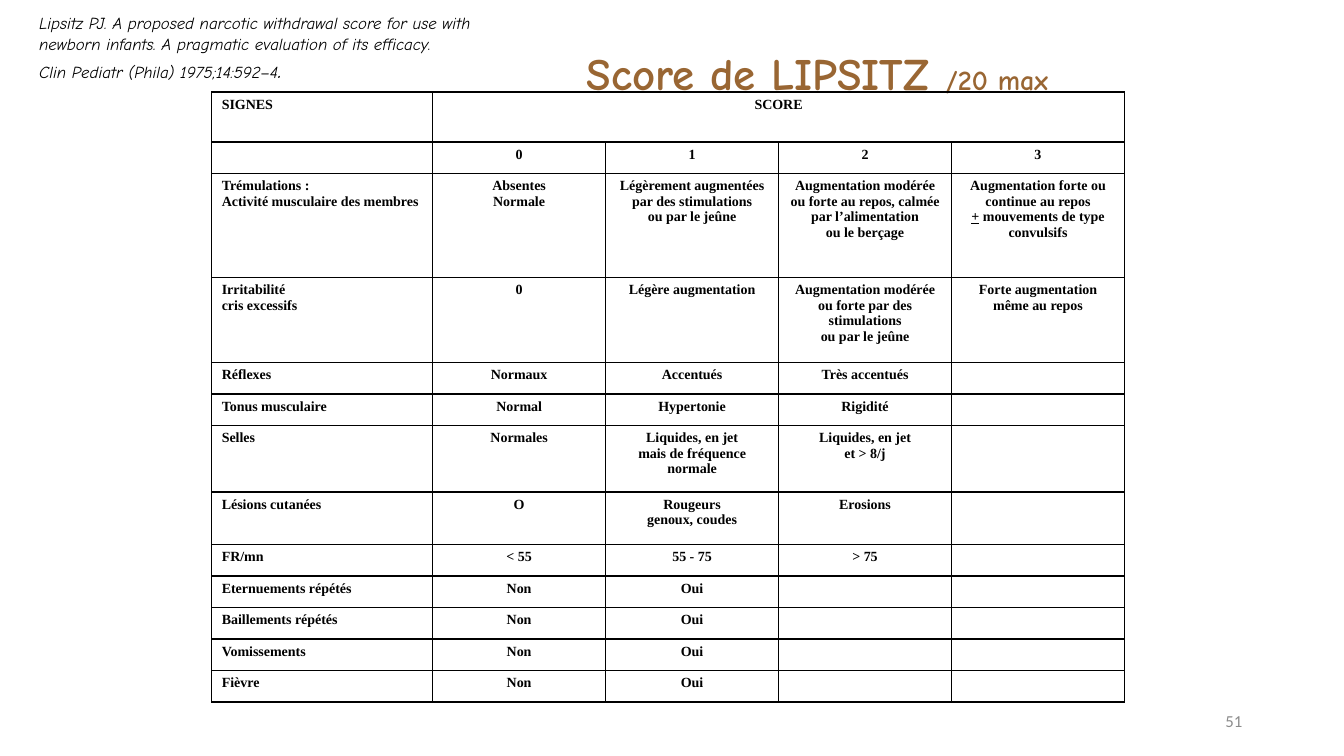
from lxml import etree
from pptx import Presentation
from pptx.dml import color
from pptx.enum import text
from pptx.oxml import ns
from pptx.util import Inches, Pt

COMIC, SERIF, SANS = "Comic Neue", "Times New Roman", "Calibri"
LEFT, CENTER, RIGHT = text.PP_ALIGN.LEFT, text.PP_ALIGN.CENTER, text.PP_ALIGN.RIGHT
MIDDLE, TOP = text.MSO_ANCHOR.MIDDLE, text.MSO_ANCHOR.TOP

# Table content: a line break starts a paragraph, underscores enclose underlined words
YES_NO = ["Non", "Oui", "", ""]
SCORES = [
    ["SIGNES", "SCORE", "", "", ""],
    ["", "0", "1", "2", "3"],
    ["Trémulations :\nActivité musculaire des membres", "Absentes\nNormale",
     "Légèrement augmentées\npar des stimulations\nou par le jeûne",
     "Augmentation modérée ou forte au repos, calmée par l’alimentation\nou le berçage",
     "Augmentation forte ou continue au repos\n_+_ mouvements de type convulsifs"],
    ["Irritabilité\ncris excessifs", "0", "Légère augmentation",
     "Augmentation modérée ou forte par des stimulations\nou par le jeûne",
     "Forte augmentation\nmême au repos"],
    ["Réflexes", "Normaux", "Accentués", "Très accentués", ""],
    ["Tonus musculaire", "Normal", "Hypertonie", "Rigidité", ""],
    ["Selles", "Normales", "Liquides, en jet\nmais de fréquence normale",
     "Liquides, en jet\net > 8/j", ""],
    ["Lésions cutanées", "O", "Rougeurs\ngenoux, coudes", "Erosions", ""],
    ["FR/mn", "< 55", "55 - 75", "> 75", ""],
    ["Eternuements répétés", *YES_NO],
    ["Baillements répétés", *YES_NO],
    ["Vomissements", *YES_NO],
    ["Fièvre", *YES_NO],
]
# Column widths and row heights, in percent of the slide
LINE = 4.17
COLUMNS = [16.44] + [12.87] * 4
ROWS = [6.61, LINE, 13.76, 11.24, LINE, LINE, 8.8, 6.94] + [LINE] * 5


def paint(hex_string):
    return color.RGBColor.from_string(hex_string)


def write(para, words, font=SERIF, size=10, ink="000000", **style):
    """Add a span; style may hold bold, italic or underline."""
    span = para.add_run()
    span.text = words
    span.font.name, span.font.size = font, Pt(size)
    span.font.color.rgb = paint(ink)
    for name, value in style.items():
        setattr(span.font, name, value)


class Page:
    """The current slide; lengths are percentages of its size."""

    def __init__(self, deck):
        self.deck = deck
        self.slide = deck.slides.add_slide(deck.slide_layouts[6])

    def across(self, share):
        return round(self.deck.slide_width * share / 100)

    def down(self, share):
        return round(self.deck.slide_height * share / 100)

    def place(self, left, top, width, height):
        return self.across(left), self.down(top), self.across(width), self.down(height)

    def text_box(self, area, paragraphs, align=LEFT, anchor=TOP, lift=0):
        """Each paragraph is a list of (words, format); lift raises the text."""
        frame = self.slide.shapes.add_textbox(*self.place(*area)).text_frame
        frame.word_wrap, frame.vertical_anchor = True, anchor
        frame.margin_bottom += self.down(lift)
        for index, spans in enumerate(paragraphs):
            para = frame.add_paragraph() if index else frame.paragraphs[0]
            para.alignment = align
            for words, style in spans:
                write(para, words, **style)

    def table(self, left, top, columns, rows, values):
        area = self.place(left, top, sum(columns), sum(rows))
        grid = self.slide.shapes.add_table(len(rows), len(columns), *area).table
        grid.first_row = grid.horz_banding = False
        for column, share in zip(grid.columns, columns):
            column.width = self.across(share)
        for row, share in zip(grid.rows, rows):
            row.height = self.down(share)
        for r, line in enumerate(values):
            for c, value in enumerate(line):
                self.cell(grid.cell(r, c), value, CENTER if c else LEFT)
        grid.cell(0, 1).merge(grid.cell(0, len(columns) - 1))

    def cell(self, cell, value, align):
        for index, line in enumerate(value.split("\n")):
            frame = cell.text_frame
            para = frame.add_paragraph() if index else frame.paragraphs[0]
            para.alignment = align
            for part, words in enumerate(line.split("_")):
                if words:
                    write(para, words, bold=True, underline=part % 2 == 1)
            if not line:  # keeps an empty row part from growing
                end = etree.SubElement(para._p, ns.qn("a:endParaRPr"))
                end.set("sz", "1000")
        self.border(cell)
        cell.fill.background()

    def border(self, cell, ink="000000", weight=1):
        properties = cell._tc.get_or_add_tcPr()
        for side in ("lnL", "lnR", "lnT", "lnB"):
            edge = etree.SubElement(properties, ns.qn("a:" + side), w=str(Pt(weight)))
            fill = etree.SubElement(edge, ns.qn("a:solidFill"))
            etree.SubElement(fill, ns.qn("a:srgbClr"), val=ink)


def main():
    deck = Presentation()
    deck.slide_width, deck.slide_height = Inches(13.33), Inches(7.5)
    page = Page(deck)

    # Title
    heading = dict(font=COMIC, ink="996633", bold=True)
    page.text_box((42.91, 4.8, 46.06, 18.4),
                  [[("Score de LIPSITZ ", dict(heading, size=32)),
                    ("/20 max", dict(heading, size=20))]], anchor=MIDDLE, lift=8.8)

    # Score table
    page.table(15.75, 12.17, COLUMNS, ROWS, SCORES)

    # Reference
    cite = dict(font=COMIC, size=12, italic=True)
    page.text_box((2.18, 1.07, 37.51, 10.8), [
        [("Lipsitz PJ. A proposed narcotic withdrawal score for use with newborn "
          "infants. A pragmatic evaluation of its efficacy.", cite)],
        [("Clin Pediatr (Phila) 1975;14:592–4", cite), (".", dict(cite, size=18))]])

    # Page number
    page.text_box((70.67, 92.67, 22.51, 5.33),
                  [[("51", dict(font=SANS, size=12, ink="8C8C8C"))]], RIGHT, MIDDLE)

    deck.save("out.pptx")


if __name__ == "__main__":
    main()
